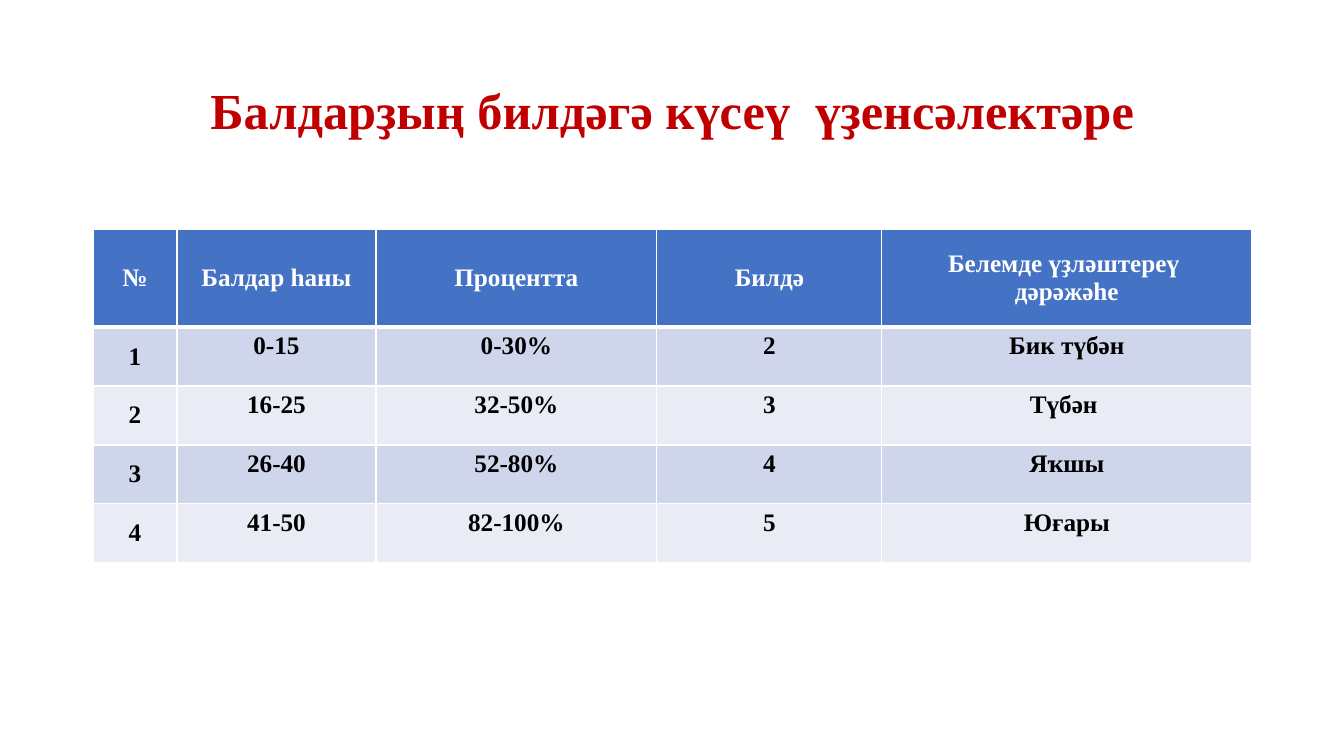
from pptx import Presentation
from pptx.dml.color import RGBColor as Color
from pptx.enum.text import MSO_ANCHOR as Anchor, PP_ALIGN as Align
from pptx.oxml import parse_xml
from pptx.oxml.ns import nsdecls
from pptx.util import Pt

PX = 914400 / 100.8
COLORS = {"title": "C00000", "header": "4472C4", "odd": "CFD5EA",
          "even": "E9EBF5", "white": "FFFFFF", "black": "000000"}


def px(length):
    return round(length * PX)


def write(frame, text, size, color, line_spacing=1.0):
    frame.text = text
    for para in frame.paragraphs:
        para.alignment = Align.CENTER
        para.line_spacing = line_spacing
        for span in para.runs:
            formats = {"name": "Times New Roman", "size": Pt(size), "bold": True}
            for name, value in formats.items():
                setattr(span.font, name, value)
            span.font.color.rgb = Color.from_string(COLORS[color])


deck = Presentation()
deck.slide_width, deck.slide_height = px(1344), px(756)
page = deck.slides.add_slide(deck.slide_layouts[6])

# Title
title = page.shapes.add_textbox(px(93), px(40), px(1159), px(146)).text_frame
title.word_wrap = True
title.vertical_anchor = Anchor.MIDDLE
write(title, "Балдарҙың билдәгә күсеү  үҙенсәлектәре", 36, "title", 0.9)

# Grade table
ROWS = [
    ["№", "Балдар һаны", "Процентта", "Билдә", "Белемде үҙләштереү \nдәрәжәһе"],
    ["1", "0-15", "0-30%", "2", "Бик түбән"],
    ["2", "16-25", "32-50%", "3", "Түбән "],
    ["3", "26-40", "52-80%", "4", "Яҡшы"],
    ["4", "41-50", "82-100%", "5", "Юғары"],
]
WIDTHS = [84, 199, 281, 225, 370]
HEIGHTS = [98] + [59] * 4

grades = page.shapes.add_table(len(ROWS), len(WIDTHS), px(93), px(229),
                               px(sum(WIDTHS)), px(sum(HEIGHTS))).table
for column, width in zip(grades.columns, WIDTHS):
    column.width = px(width)
for row, height in zip(grades.rows, HEIGHTS):
    row.height = px(height)

for r, texts in enumerate(ROWS):
    is_header = r == 0
    fill = "header" if is_header else "odd" if r % 2 else "even"
    for c, text in enumerate(texts):
        cell = grades.cell(r, c)
        write(cell.text_frame, text, 18, "white" if is_header else "black")
        cell.vertical_anchor = Anchor.MIDDLE if is_header or c == 0 else Anchor.TOP

        # White borders, thicker between header and body
        for side in "LRTB":
            thick = (r, side) in [(0, "B"), (1, "T")]
            cell._tc.get_or_add_tcPr().append(parse_xml(
                f'<a:ln{side} {nsdecls("a")} w="{Pt(3 if thick else 1)}"><a:solidFill>'
                f'<a:srgbClr val="{COLORS["white"]}"/></a:solidFill></a:ln{side}>'))
        cell.fill.solid()
        cell.fill.fore_color.rgb = Color.from_string(COLORS[fill])

deck.save("out.pptx")
